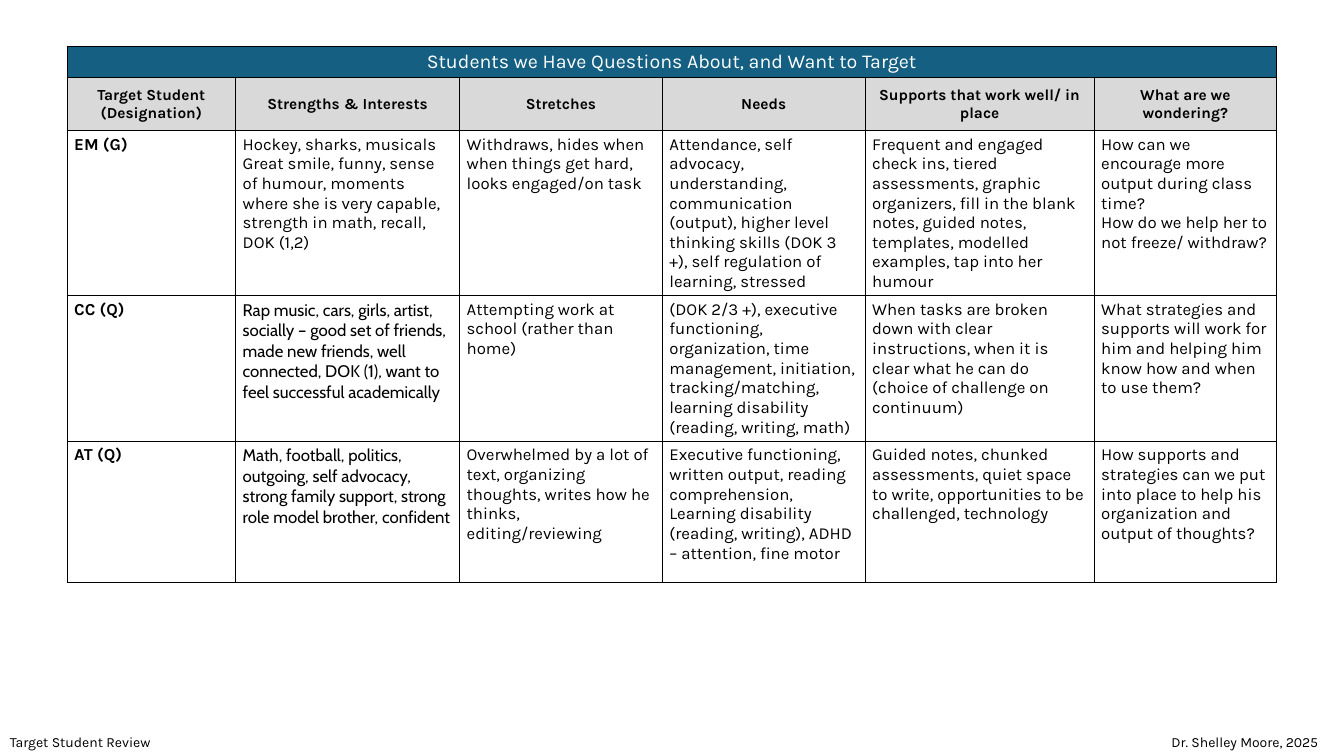
from lxml.etree import SubElement
from pptx import Presentation
from pptx.dml.color import RGBColor
from pptx.enum.text import MSO_ANCHOR, PP_ALIGN
from pptx.oxml.ns import qn
from pptx.util import Inches, Pt

SLIDE_WIDTH, SLIDE_HEIGHT = 13.33, 7.5
COLORS = {"banner": "156082", "header": "D9D9D9", "body": "FFFFFF",
          "ink": "000000", "banner_text": "FFFFFF"}
COLUMN_WIDTHS = [1.67, 2.22, 2.01, 2.01, 2.27, 1.81]
ROW_HEIGHTS = [0.24, 0.53, 1.4, 1.4, 1.4]
FOOTER_WIDTH, FOOTER_HEIGHT = 1.81, 0.27

BANNER = "Students we Have Questions About, and Want to Target"
HEADERS = ["Target Student\n(Designation)", "Strengths & Interests", "Stretches",
           "Needs", "Supports that work well/ in place", "What are we wondering?"]
# Each student: font of the strengths cell, then the six cells of the row
STUDENTS = [
    ("Karla", [
        "EM (G)",
        "Hockey, sharks, musicals\nGreat smile, funny, sense of humour, moments where she is "
        "very capable, strength in math, recall, DOK (1,2)",
        "Withdraws, hides when when things get hard, looks engaged/on task",
        "Attendance, self advocacy, understanding, communication (output), higher level "
        "thinking skills (DOK 3 +), self regulation of learning, stressed",
        "Frequent and engaged check ins, tiered assessments, graphic organizers, fill in the "
        "blank notes, guided notes, templates, modelled examples, tap into her humour",
        "How can we encourage more output during class time?\n"
        "How do we help her to not freeze/ withdraw?"]),
    ("Cabin", [
        "CC (Q)",
        "Rap music, cars, girls, artist, socially – good set of friends, made new friends, "
        "well connected, DOK (1), want to feel successful academically",
        "Attempting work at school (rather than home)",
        "(DOK 2/3 +), executive functioning, organization, time management, initiation, "
        "tracking/matching, learning disability (reading, writing, math)",
        "When tasks are broken down with clear instructions, when it is clear what he can do "
        "(choice of challenge on continuum)",
        "What strategies and supports will work for him and helping him know how and when to "
        "use them?"]),
    ("Cabin", [
        "AT (Q)",
        "Math, football, politics, outgoing, self advocacy, strong family support, strong "
        "role model brother, confident",
        "Overwhelmed by a lot of text, organizing thoughts, writes how he thinks, "
        "editing/reviewing",
        "Executive functioning, written output, reading comprehension, Learning disability "
        "(reading, writing), ADHD – attention, fine motor",
        "Guided notes, chunked assessments, quiet space to write, opportunities to be "
        "challenged, technology",
        "How supports and strategies can we put into place to help his organization and "
        "output of thoughts?"]),
]


def write_text(text_frame, text, size=12, font="Karla", color="ink", bold=False,
               align=PP_ALIGN.LEFT):
    """Write one paragraph per line of text."""
    for index, line in enumerate(text.split("\n")):
        paragraph = text_frame.add_paragraph() if index else text_frame.paragraphs[0]
        paragraph.alignment = align
        run = paragraph.add_run()
        run.text = line
        run.font.name, run.font.size, run.font.bold = font, Pt(size), bold
        run.font.color.rgb = RGBColor.from_string(COLORS[color])


def style_cell(cell, fill, anchor=MSO_ANCHOR.TOP):
    """Set margins, black one-point borders and the fill."""
    cell.margin_left = cell.margin_right = Inches(0.07)
    cell.margin_top = cell.margin_bottom = Inches(0.04)
    cell.vertical_anchor = anchor
    properties = cell._tc.get_or_add_tcPr()
    for side in ("a:lnL", "a:lnR", "a:lnT", "a:lnB"):
        border = SubElement(properties, qn(side), w=str(Pt(1)))
        SubElement(SubElement(border, qn("a:solidFill")), qn("a:srgbClr"), val=COLORS["ink"])
    cell.fill.solid()
    cell.fill.fore_color.rgb = RGBColor.from_string(COLORS[fill])


def add_student_table(slide, left, top, width):
    frame = slide.shapes.add_table(len(ROW_HEIGHTS), len(COLUMN_WIDTHS), Inches(left),
                                   Inches(top), Inches(width), Inches(sum(ROW_HEIGHTS)))
    table = frame.table
    for column, share in zip(table.columns, COLUMN_WIDTHS):
        column.width = Inches(width * share / sum(COLUMN_WIDTHS))
    for row, height in zip(table.rows, ROW_HEIGHTS):
        row.height = Inches(height)

    # Banner across all columns
    for cell in table.rows[0].cells:
        style_cell(cell, "banner")
    banner = table.cell(0, 0)
    banner.merge(table.cell(0, len(COLUMN_WIDTHS) - 1))
    write_text(banner.text_frame, BANNER, size=14, color="banner_text", align=PP_ALIGN.CENTER)

    # Column headings
    for cell, heading in zip(table.rows[1].cells, HEADERS):
        style_cell(cell, "header", MSO_ANCHOR.MIDDLE)
        write_text(cell.text_frame, heading, size=11, bold=True, align=PP_ALIGN.CENTER)

    # One row per student
    for row_index, (strengths_font, texts) in enumerate(STUDENTS, start=2):
        for column_index, text in enumerate(texts):
            cell = table.cell(row_index, column_index)
            style_cell(cell, "body")
            write_text(cell.text_frame, text, bold=column_index == 0,
                       font=strengths_font if column_index == 1 else "Karla")


def add_footer(slide, left, top, width, height, text):
    box = slide.shapes.add_textbox(Inches(left), Inches(top), Inches(width), Inches(height))
    box.text_frame.word_wrap = True
    write_text(box.text_frame, text, size=10)


def main():
    presentation = Presentation()
    presentation.slide_width = Inches(SLIDE_WIDTH)
    presentation.slide_height = Inches(SLIDE_HEIGHT)
    slide = presentation.slides.add_slide(presentation.slide_layouts[6])
    add_student_table(slide, SLIDE_WIDTH * 0.05, 0.46, SLIDE_WIDTH * 0.9)
    footers = [(0, "Target Student Review"),
               (SLIDE_WIDTH - FOOTER_WIDTH, "Dr. Shelley Moore, 2025")]
    for left, text in footers:
        add_footer(slide, left, SLIDE_HEIGHT - FOOTER_HEIGHT, FOOTER_WIDTH, FOOTER_HEIGHT, text)
    presentation.save("out.pptx")


if __name__ == "__main__":
    main()
